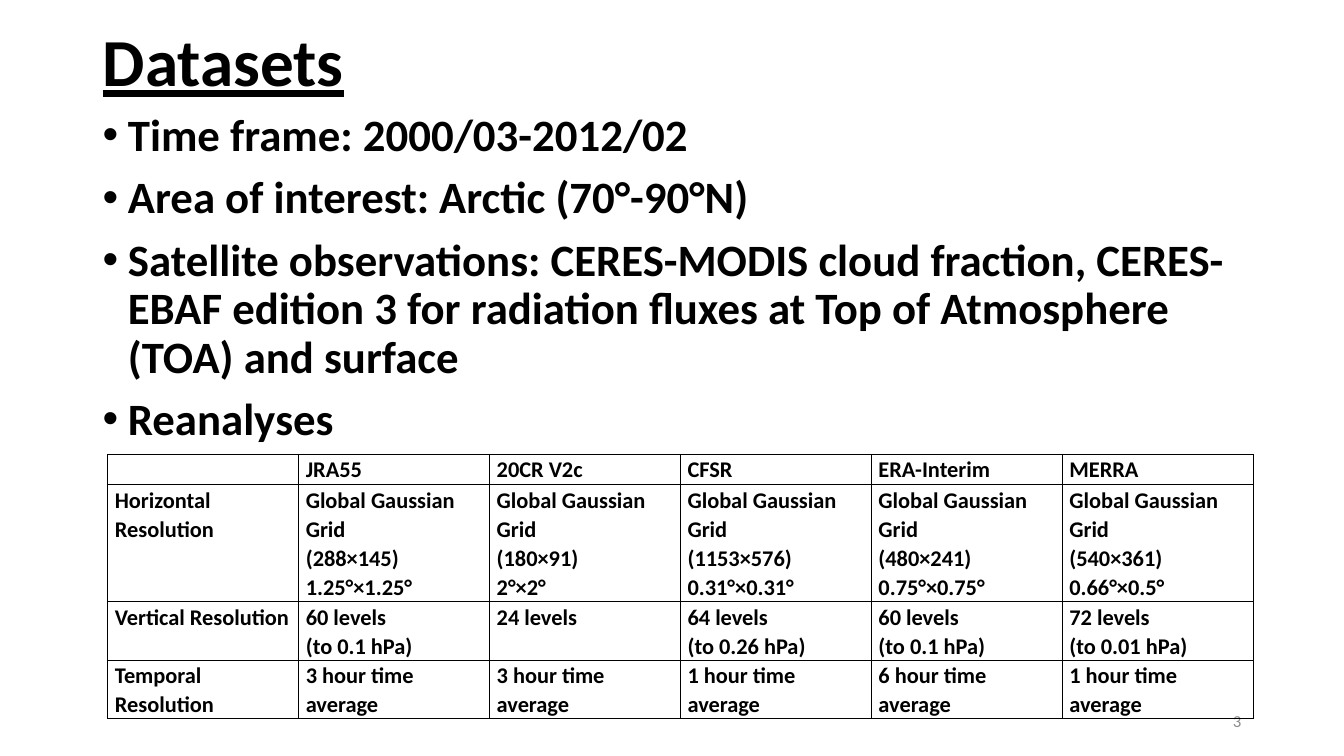
from lxml import etree
from pptx import Presentation
from pptx import util as u
from pptx.dml.color import RGBColor
from pptx.enum import text
from pptx.oxml import ns

TITLE = "Datasets"
BULLETS = [
    "Time frame: 2000/03-2012/02",
    "Area of interest: Arctic (70°-90°N)",
    "Satellite observations: CERES-MODIS cloud fraction, CERES-EBAF edition 3 "
    "for radiation fluxes at Top of Atmosphere (TOA) and surface",
    "Reanalyses",
]
PAGE_NUMBER = "3"
GRID = "Global Gaussian Grid"
REANALYSES = [
    ["", "JRA55", "20CR V2c", "CFSR", "ERA-Interim", "MERRA"],
    ["Horizontal Resolution", f"{GRID}\n(288×145)\n1.25°×1.25°", f"{GRID}\n(180×91)\n2°×2°",
     f"{GRID}\n(1153×576)\n0.31°×0.31°", f"{GRID}\n(480×241)\n0.75°×0.75°",
     f"{GRID}\n(540×361)\n0.66°×0.5°"],
    ["Vertical Resolution", "60 levels\n(to 0.1 hPa)", "24 levels", "64 levels\n(to 0.26 hPa)",
     "60 levels\n(to 0.1 hPa)", "72 levels\n(to 0.01 hPa)"],
    ["Temporal\nResolution", "3 hour time average", "3 hour time average",
     "1 hour time\naverage", "6 hour time\naverage", "1 hour time average"],
]
ROW_LINES = [1, 4, 2, 2]
LINE_HEIGHT = 0.29

WIDTH, HEIGHT = 13.33, 7.5
MARGIN = 0.92
CONTENT_WIDTH = WIDTH - 2 * MARGIN
TABLE_LEFT, TABLE_TOP, TABLE_WIDTH = 1.07, 4.51, 11.36
BLACK, GRAY = "000000", "8C8C8C"


def color(value):
    return RGBColor.from_string(value)


def write(frame, content, size, hue=BLACK, bold=True, underline=None, align=None,
          spacing=None, before=0, bullet=False):
    frame.word_wrap = True
    for index, line in enumerate(content.split("\n")):
        paragraph = frame.add_paragraph() if index else frame.paragraphs[0]
        paragraph.alignment = align
        paragraph.line_spacing = spacing
        paragraph.space_before = u.Pt(before)
        if bullet:
            properties = paragraph._p.get_or_add_pPr()
            properties.set("marL", str(u.Inches(0.25)))
            properties.set("indent", str(-u.Inches(0.25)))
            etree.SubElement(properties, ns.qn("a:buFont")).set("typeface", "Arial")
            etree.SubElement(properties, ns.qn("a:buChar")).set("char", "•")
        run = paragraph.add_run()
        run.text = line
        font = run.font
        font.name, font.size, font.bold, font.underline = "Calibri", u.Pt(size), bold, underline
        font.color.rgb = color(hue)


def add_text(slide, box, content, anchor=text.MSO_ANCHOR.MIDDLE, **style):
    shape = slide.shapes.add_textbox(*map(u.Inches, box))
    shape.text_frame.vertical_anchor = anchor
    write(shape.text_frame, content, **style)


def draw_borders(cell):
    properties = cell._tc.get_or_add_tcPr()
    for index, side in enumerate(("lnL", "lnR", "lnT", "lnB")):
        line = etree.Element(ns.qn(f"a:{side}"), w=str(u.Pt(1)))
        fill = etree.SubElement(line, ns.qn("a:solidFill"))
        etree.SubElement(fill, ns.qn("a:srgbClr")).set("val", BLACK)
        properties.insert(index, line)


def add_reanalyses(slide):
    rows, columns = len(REANALYSES), len(REANALYSES[0])
    box = TABLE_LEFT, TABLE_TOP, TABLE_WIDTH, LINE_HEIGHT * sum(ROW_LINES)
    table = slide.shapes.add_table(rows, columns, *map(u.Inches, box)).table
    table.first_row = table.horz_banding = False
    for row, lines, contents in zip(table.rows, ROW_LINES, REANALYSES):
        row.height = u.Inches(LINE_HEIGHT * lines)
        for cell, content in zip(row.cells, contents):
            cell.margin_left = cell.margin_right = u.Inches(0.07)
            cell.margin_top = cell.margin_bottom = 0
            cell.fill.background()
            draw_borders(cell)
            write(cell.text_frame, content, size=16, spacing=1.07)


def main():
    presentation = Presentation()
    presentation.slide_width, presentation.slide_height = u.Inches(WIDTH), u.Inches(HEIGHT)
    slide = presentation.slides.add_slide(presentation.slide_layouts[6])
    add_text(slide, (MARGIN, -0.08, CONTENT_WIDTH, 1.45), TITLE,
             size=48, underline=True, spacing=0.9)
    add_text(slide, (MARGIN, 1.07, CONTENT_WIDTH, 4.76), "\n".join(BULLETS),
             anchor=text.MSO_ANCHOR.TOP, size=32, spacing=0.9, before=10, bullet=True)
    add_text(slide, (WIDTH - MARGIN - 3, 6.95, 3, 0.4), PAGE_NUMBER,
             size=12, hue=GRAY, bold=False, align=text.PP_ALIGN.RIGHT)
    add_reanalyses(slide)
    presentation.save("out.pptx")


if __name__ == "__main__":
    main()
